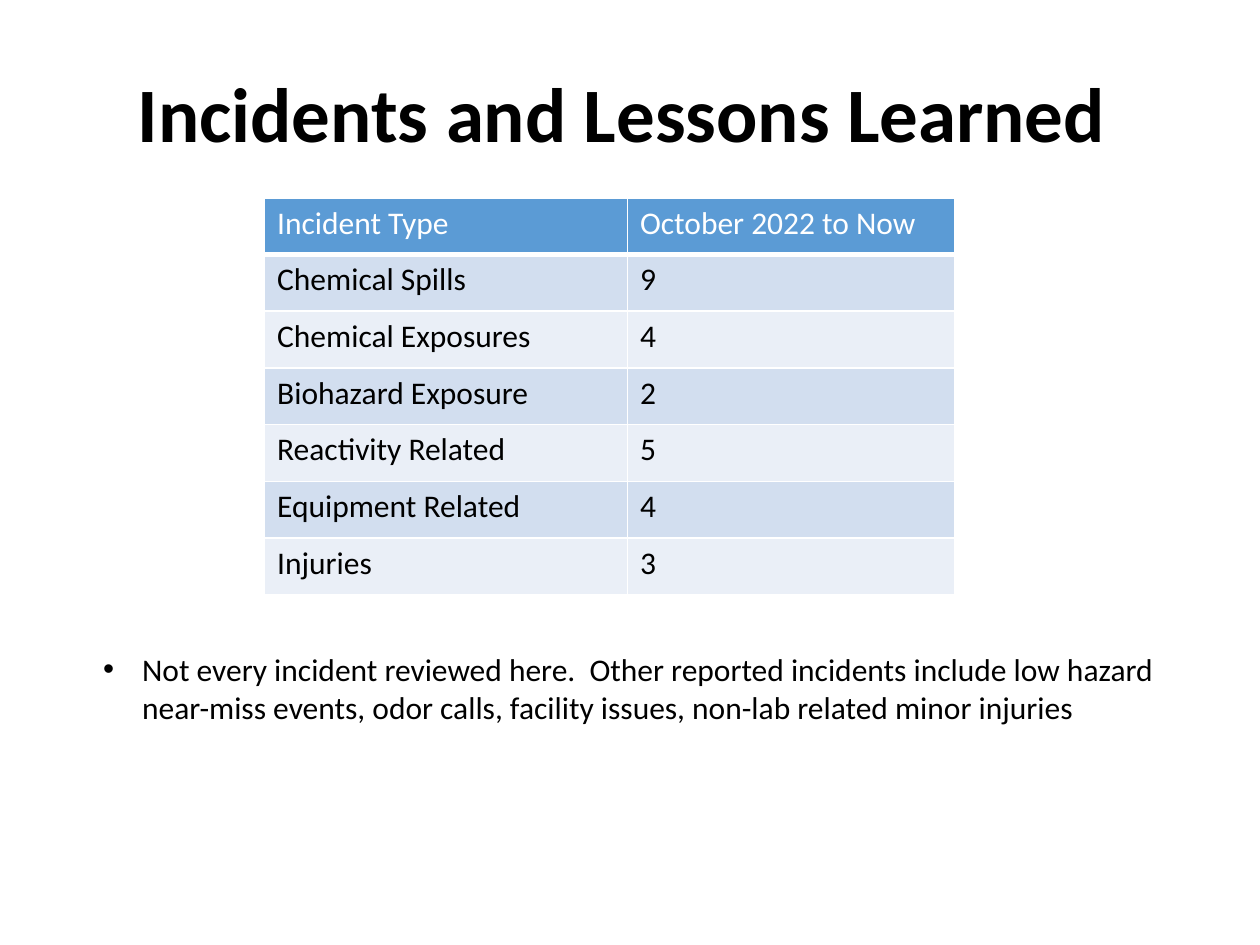
from lxml.etree import SubElement
from pptx import Presentation
from pptx.dml.color import RGBColor
from pptx.enum.text import MSO_ANCHOR as Anchor, PP_ALIGN as Align
from pptx.oxml.ns import qn
from pptx.util import Inches, Pt

COLORS = {
    "text": "000000",
    "white": "FFFFFF",
    "header": "5B9BD5",
    "band_dark": "D2DEEF",
    "band_light": "EAEFF7",
}
INCIDENTS = [
    ("Incident Type", "October 2022 to Now"),
    ("Chemical Spills", "9"),
    ("Chemical Exposures", "4"),
    ("Biohazard Exposure", "2"),
    ("Reactivity Related", "5"),
    ("Equipment Related", "4"),
    ("Injuries", "3"),
]
COLUMN_WIDTHS = (2.88, 2.6)
ROW_HEIGHT = 0.45


def color(name):
    """Return the named palette color."""
    return RGBColor.from_string(COLORS[name])


def style_paragraph(paragraph, size, color_name="text", bold=False):
    """Set the font of a whole paragraph."""
    font = paragraph.font
    font.name, font.size, font.bold = "Calibri", Pt(size), bold
    font.color.rgb = color(color_name)


def add_text(slide, text, left, top, width, height, size, bold=False):
    """Add a wrapping text box and return its frame."""
    frame = slide.shapes.add_textbox(
        Inches(left), Inches(top), Inches(width), Inches(height)
    ).text_frame
    frame.word_wrap = True
    frame.text = text
    style_paragraph(frame.paragraphs[0], size, bold=bold)
    return frame


def add_title(slide, text):
    """Add the centred, bottom-anchored slide title."""
    frame = add_text(slide, text, 0.63, 0.31, 8.62, 1, 44, bold=True)
    frame.vertical_anchor = Anchor.BOTTOM
    frame.paragraphs[0].alignment = Align.CENTER
    frame.paragraphs[0].line_spacing = 0.9


def add_bullet_note(slide, text):
    """Add a bulleted note with a hanging indent."""
    frame = add_text(slide, text, 0.72, 5.11, 8.92, 1.01, 18)
    properties = frame.paragraphs[0]._p.get_or_add_pPr()
    indent = Inches(0.31)
    properties.set("marL", str(indent))
    properties.set("indent", str(-indent))
    SubElement(properties, qn("a:buFont")).set("typeface", "Arial")
    SubElement(properties, qn("a:buChar")).set("char", "•")
    properties.append(properties.find(qn("a:defRPr")))


def add_borders(cell, bottom_width, top_width):
    """Draw white lines around a table cell."""
    properties = cell._tc.get_or_add_tcPr()
    widths = {"lnL": 1, "lnR": 1, "lnT": top_width, "lnB": bottom_width}
    for side, width in widths.items():
        line = SubElement(properties, qn(f"a:{side}"), w=str(Pt(width)))
        fill = SubElement(line, qn("a:solidFill"))
        SubElement(fill, qn("a:srgbClr"), val=COLORS["white"])


def fill_cell(cell, text, row):
    """Write and style one cell according to its row."""
    cell.text = text
    style_paragraph(cell.text_frame.paragraphs[0], 18, "text" if row else "white")
    add_borders(cell, 1 if row else 3, 3 if row == 1 else 1)
    band = "band_dark" if row % 2 else "band_light"
    cell.fill.solid()
    cell.fill.fore_color.rgb = color(band if row else "header")


def add_incident_table(slide, incidents):
    """Add the table of incident counts."""
    table = slide.shapes.add_table(
        len(incidents), len(COLUMN_WIDTHS), Inches(2.1), Inches(1.57),
        Inches(sum(COLUMN_WIDTHS)), Inches(ROW_HEIGHT * len(incidents)),
    ).table
    for column, width in zip(table.columns, COLUMN_WIDTHS):
        column.width = Inches(width)
    for row, values in enumerate(incidents):
        table.rows[row].height = Inches(ROW_HEIGHT)
        for column, value in enumerate(values):
            fill_cell(table.cell(row, column), value, row)


def main():
    """Build and save the incident slide."""
    presentation = Presentation()
    presentation.slide_width = Inches(10)
    presentation.slide_height = Inches(7.5)
    slide = presentation.slides.add_slide(presentation.slide_layouts[6])
    add_incident_table(slide, INCIDENTS)
    add_title(slide, "Incidents and Lessons Learned")
    add_bullet_note(
        slide,
        "Not every incident reviewed here.  Other reported incidents include "
        "low hazard near-miss events, odor calls, facility issues, "
        "non-lab related minor injuries",
    )
    presentation.save("out.pptx")


if __name__ == "__main__":
    main()
